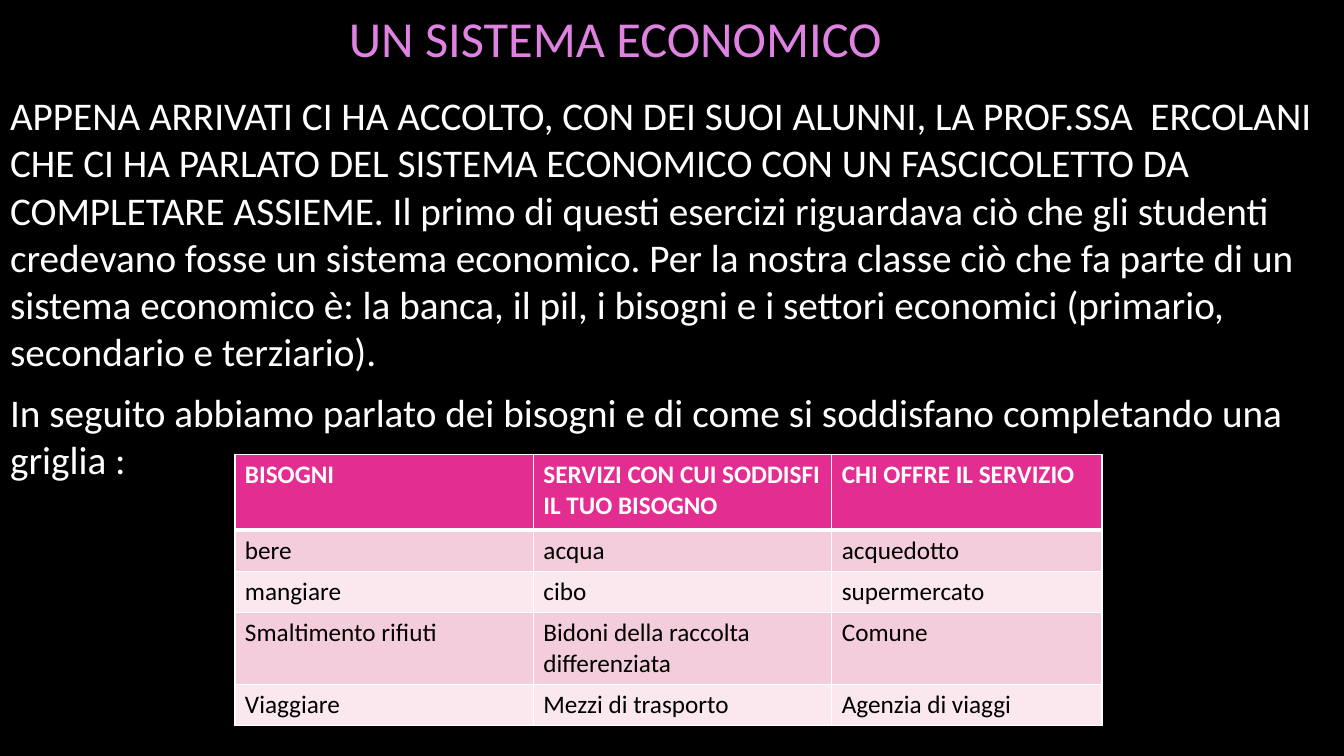
from typing import NamedTuple

from lxml import etree
from pptx import Presentation
from pptx import util as u
from pptx.dml.color import RGBColor
from pptx.enum import text
from pptx.oxml import ns

FONT = "Calibri"
WHITE, BLACK = "FFFFFF", "000000"
LILAC, MAGENTA = "DF82E2", "E32D91"
BANDS = ("F4CDDC", "FAE8EE")


class Box(NamedTuple):
    left: float
    top: float
    width: float
    height: float


class Style(NamedTuple):
    size: float
    color: str
    bold: bool = False


class TableRow(NamedTuple):
    height: float
    need: str
    service: str
    provider: str


TITLE = "UN SISTEMA ECONOMICO"
PARAGRAPHS = (
    "APPENA ARRIVATI CI HA ACCOLTO, CON DEI SUOI ALUNNI, LA PROF.SSA  ERCOLANI "
    "CHE CI HA PARLATO DEL SISTEMA ECONOMICO CON UN FASCICOLETTO DA COMPLETARE "
    "ASSIEME. Il primo di questi esercizi riguardava ciò che gli studenti credevano "
    "fosse un sistema economico. Per la nostra classe ciò che fa parte di un sistema "
    "economico è: la banca, il pil, i bisogni e i settori economici (primario, "
    "secondario e terziario).",
    "In seguito abbiamo parlato dei bisogni e di come si soddisfano completando una "
    "griglia :",
)
COLUMN_WIDTHS = (2.96, 2.96, 2.68)
ROWS = (
    TableRow(0.75, "BISOGNI", "SERVIZI CON CUI SODDISFI IL TUO BISOGNO",
             "CHI OFFRE IL SERVIZIO"),
    TableRow(0.41, "bere", "acqua", "acquedotto"),
    TableRow(0.41, "mangiare", "cibo", "supermercato"),
    TableRow(0.71, "Smaltimento rifiuti", "Bidoni della raccolta differenziata",
             "Comune"),
    TableRow(0.41, "Viaggiare", "Mezzi di trasporto", "Agenzia di viaggi"),
)


def set_fill(fill, color: str) -> None:
    fill.solid()
    fill.fore_color.rgb = RGBColor.from_string(color)


def add_run(paragraph, words: str, style: Style) -> None:
    run = paragraph.add_run()
    run.text = words
    run.font.name = FONT
    run.font.size = u.Pt(style.size)
    run.font.bold = style.bold
    set_fill(run.font.fill, style.color)


def place(shape, box: Box, anchor) -> None:
    shape.left, shape.top, shape.width, shape.height = map(u.Inches, box)
    frame = shape.text_frame
    frame.word_wrap = True
    frame.auto_size = text.MSO_AUTO_SIZE.NONE
    frame.vertical_anchor = anchor


def add_border(cell, side: str, points: float) -> None:
    properties = cell._tc.get_or_add_tcPr()
    line = etree.SubElement(properties, ns.qn(f"a:ln{side}"), w=str(u.Pt(points)))
    fill = etree.SubElement(line, ns.qn("a:solidFill"))
    etree.SubElement(fill, ns.qn("a:srgbClr"), val=WHITE)


def format_cell(cell, words: str, row_index: int) -> None:
    is_header = row_index == 0
    add_run(cell.text_frame.paragraphs[0], words,
            Style(18, WHITE if is_header else BLACK, is_header))
    widths = {"L": 1, "R": 1, "T": 3 if row_index == 1 else 1,
              "B": 3 if is_header else 1}
    for side, points in widths.items():
        add_border(cell, side, points)
    set_fill(cell.fill, MAGENTA if is_header else BANDS[(row_index - 1) % 2])


def add_title(slide) -> None:
    title = slide.shapes.title
    place(title, Box(3.36, -0.42, 5.89, 1.59), text.MSO_ANCHOR.MIDDLE)
    paragraph = title.text_frame.paragraphs[0]
    paragraph.alignment = text.PP_ALIGN.LEFT
    add_run(paragraph, TITLE, Style(36, LILAC))


def add_body(slide) -> None:
    body = slide.placeholders[1]
    place(body, Box(0, 0.86, 13.33, 4.18), text.MSO_ANCHOR.TOP)
    frame = body.text_frame
    for index, words in enumerate(PARAGRAPHS):
        paragraph = frame.add_paragraph() if index else frame.paragraphs[0]
        properties = paragraph._p.get_or_add_pPr()
        properties.set("marL", "0")
        properties.set("indent", "0")
        etree.SubElement(properties, ns.qn("a:buNone"))
        paragraph.space_before = u.Pt(0)
        paragraph.space_after = u.Pt(10)
        add_run(paragraph, words, Style(28, WHITE))


def add_needs_table(slide) -> None:
    box = Box(2.33, 4.51, sum(COLUMN_WIDTHS), sum(row.height for row in ROWS))
    table = slide.shapes.add_table(
        len(ROWS), len(COLUMN_WIDTHS), *map(u.Inches, box)).table
    for column, width in zip(table.columns, COLUMN_WIDTHS):
        column.width = u.Inches(width)
    for row_index, row in enumerate(ROWS):
        table.rows[row_index].height = u.Inches(row.height)
        for column_index, words in enumerate((row.need, row.service, row.provider)):
            format_cell(table.cell(row_index, column_index), words, row_index)


def main() -> None:
    presentation = Presentation()
    presentation.slide_width = u.Inches(13.33)
    presentation.slide_height = u.Inches(7.5)
    slide = presentation.slides.add_slide(presentation.slide_layouts[1])
    set_fill(slide.background.fill, BLACK)

    # Heading and introduction
    add_title(slide)
    add_body(slide)

    # Grid of needs and services
    add_needs_table(slide)

    presentation.save("out.pptx")


if __name__ == "__main__":
    main()
